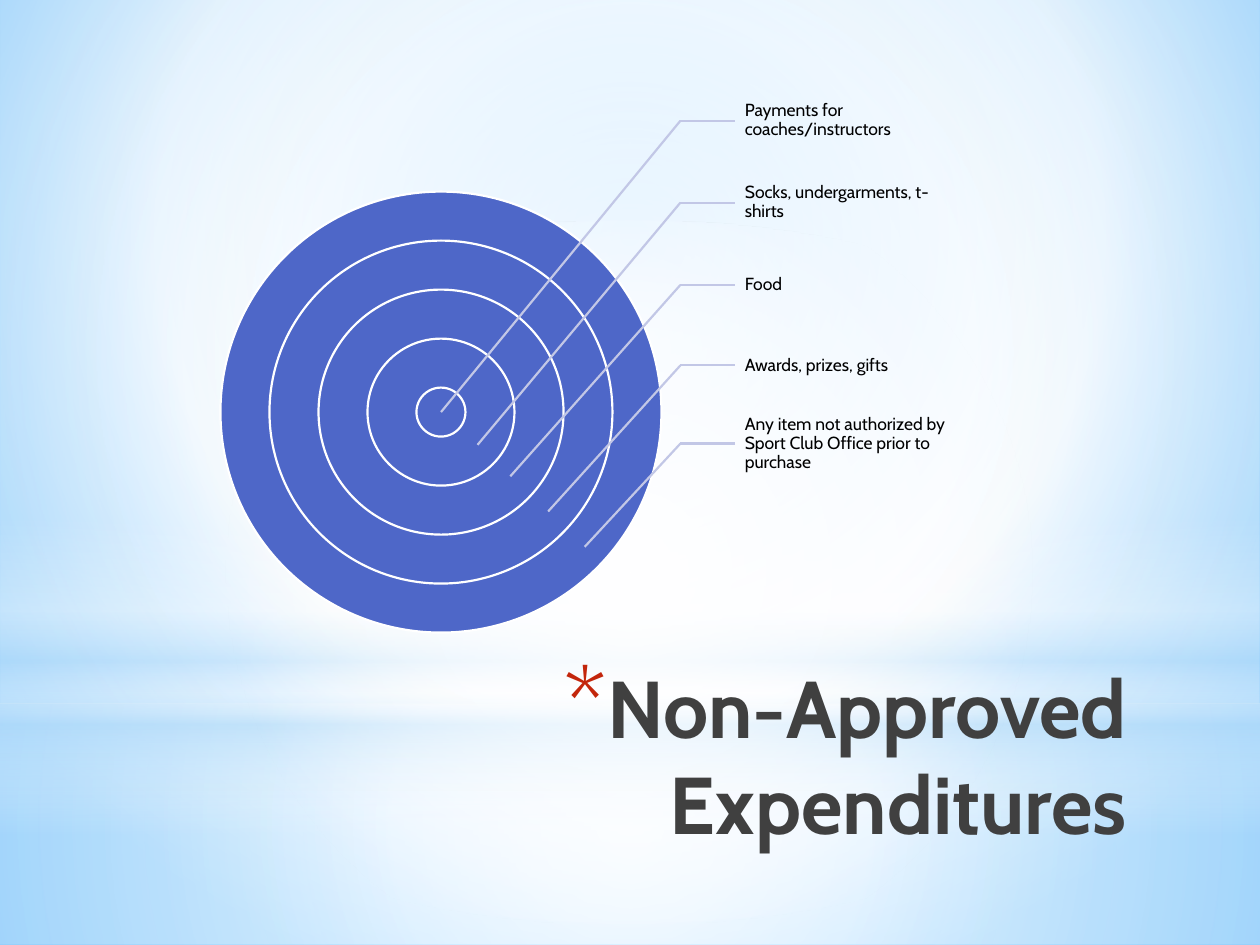
from lxml.etree import SubElement
from pptx import Presentation
from pptx.dml.color import RGBColor
from pptx.enum.shapes import MSO_CONNECTOR, MSO_SHAPE
from pptx.enum.text import MSO_ANCHOR, PP_ALIGN
from pptx.oxml.ns import qn
from pptx.util import Pt

TITLE = "Non-Approved Expenditures"
ITEMS = [
    ("Payments for coaches/instructors", 69, (252, 235.5)),
    ("Socks, undergarments, t-shirts", 115.8, (272.9, 254.2)),
    ("Food", 162.8, (291.6, 272.2)),
    ("Awards, prizes, gifts", 208.8, (313.2, 292.3)),
    ("Any item not authorized by Sport Club Office prior to purchase", 253.5, (334.1, 312.5)),
]
THEME = {
    "font": "Cabin", "title_size": 46, "label_size": 10,
    "title": "404040", "star": "C3260C", "label": "000000",
    "ring": "4E67C8", "edge": "FFFFFF", "leader": "C2C7E6", "stroke": 1.25,
}
CENTER = (50, 50, 50, 50)
BACKGROUND = [(0, "9ED5FF", 100), (60, "FFFFFF", 100), (100, "5BB9FF", 100)]
GLOWS = [
    (MSO_SHAPE.RECTANGLE, 401.8, 138.2, CENTER,
     [(0, "FFFFFF", 91), (37, "FFFFFF", 76), (100, "B4DCFA", 79)]),
    (MSO_SHAPE.RECTANGLE, 0, 401.8, CENTER,
     [(0, "FFFFFF", 89), (48, "FFFFFF", 62), (100, "B4DCFA", 79)]),
    (MSO_SHAPE.RECTANGLE, 296.6, 180, None,
     [(0, "FFFFFF", 0), (29, "FFFFFF", 30), (45, "B4DCFA", 40),
      (55, "FFFFFF", 26), (65, "B4DCFA", 60), (100, "FFFFFF", 0)]),
    (MSO_SHAPE.OVAL, 126, 401.8, CENTER,
     [(0, "FFFFFF", 100), (56, "FFFFFF", 0)]),
]
CX, CY, DIAMETER = 252, 235.5, 252
ELBOW_X, LABEL_X, LABEL_W, LABEL_H = 388.8, 420, 126, 44.6


def color(name):
    return RGBColor.from_string(THEME[name])


def set_gradient(owner, fill, stops, focus):
    fill.gradient()
    grad = next(owner.element.iter(qn("a:gradFill")))
    for child in list(grad):
        grad.remove(child)
    gs_list = SubElement(grad, qn("a:gsLst"))
    for pos, rgb, alpha in stops:
        gs = SubElement(gs_list, qn("a:gs"), pos=str(pos * 1000))
        clr = SubElement(gs, qn("a:srgbClr"), val=rgb)
        if alpha < 100:
            SubElement(clr, qn("a:alpha"), val=str(alpha * 1000))
    if focus:
        path = SubElement(grad, qn("a:path"), path="circle")
        sides = {k: str(v * 1000) for k, v in zip("ltrb", focus)}
        SubElement(path, qn("a:fillToRect"), **sides)
    else:
        SubElement(grad, qn("a:lin"), ang="5400000", scaled="0")


def style_run(p, size, name, bold=False):
    font = p.runs[0].font
    font.name, font.size, font.bold = THEME["font"], Pt(THEME[size]), bold
    font.color.rgb = color(name)


def add_leader(shapes, x1, y1, x2, y2):
    line = shapes.add_connector(MSO_CONNECTOR.STRAIGHT, Pt(x1), Pt(y1), Pt(x2), Pt(y2))
    line.line.color.rgb = color("leader")
    line.line.width = Pt(THEME["stroke"])
    SubElement(line.element.spPr, qn("a:effectLst"))
    return line


def add_backdrop(s):
    set_gradient(s, s.background.fill, BACKGROUND, (20, 10, 20, 60))
    for kind, top, height, focus, stops in GLOWS:
        sp = s.shapes.add_shape(kind, 0, Pt(top), Pt(720), Pt(height))
        sp.shadow.inherit = False
        sp.line.fill.background()
        set_gradient(sp, sp.fill, stops, focus)


def add_title(s):
    sp = s.shapes.add_textbox(Pt(138.2), Pt(372.2), Pt(512.6), Pt(90))
    tf = sp.text_frame
    tf.word_wrap = True
    tf.vertical_anchor = MSO_ANCHOR.TOP
    p = tf.paragraphs[0]
    p.text = TITLE
    p.alignment = PP_ALIGN.RIGHT
    style_run(p, "title_size", "title", True)
    pPr = p._p.get_or_add_pPr()
    pPr.set("marL", str(Pt(25.2)))
    pPr.set("indent", str(-Pt(25.2)))
    bullet_color = SubElement(pPr, qn("a:buClr"))
    SubElement(bullet_color, qn("a:srgbClr"), val=THEME["star"])
    SubElement(pPr, qn("a:buSzPct"), val="128000")
    SubElement(pPr, qn("a:buFont"), typeface=THEME["font"])
    SubElement(pPr, qn("a:buChar"), char="*")


def add_target(s):
    shapes = s.shapes.add_group_shape().shapes
    parts = 2 * len(ITEMS) - 1
    for i in range(parts, 0, -2):
        d = DIAMETER * i / parts
        sp = shapes.add_shape(MSO_SHAPE.OVAL, Pt(CX - d / 2), Pt(CY - d / 2), Pt(d), Pt(d))
        sp.shadow.inherit = False
        sp.fill.solid()
        sp.fill.fore_color.rgb = color("ring")
        sp.line.color.rgb = color("edge")
        sp.line.width = Pt(THEME["stroke"])
    for text, y, tip in ITEMS:
        sp = shapes.add_textbox(Pt(LABEL_X), Pt(y - LABEL_H / 2), Pt(LABEL_W), Pt(LABEL_H))
        tf = sp.text_frame
        tf.word_wrap = True
        tf.vertical_anchor = MSO_ANCHOR.MIDDLE
        tf.margin_left = Pt(5.6)
        tf.margin_top = tf.margin_right = tf.margin_bottom = Pt(0.8)
        p = tf.paragraphs[0]
        p.text = text
        p.line_spacing = 0.9
        style_run(p, "label_size", "label")
        add_leader(shapes, ELBOW_X, y, LABEL_X, y).end_connect(sp, 1)
        add_leader(shapes, ELBOW_X, y, *tip)


def main():
    prs = Presentation()
    prs.slide_width, prs.slide_height = Pt(720), Pt(540)
    s = prs.slides.add_slide(prs.slide_layouts[6])
    add_backdrop(s)
    add_title(s)
    add_target(s)
    prs.save("out.pptx")


if __name__ == "__main__":
    main()
